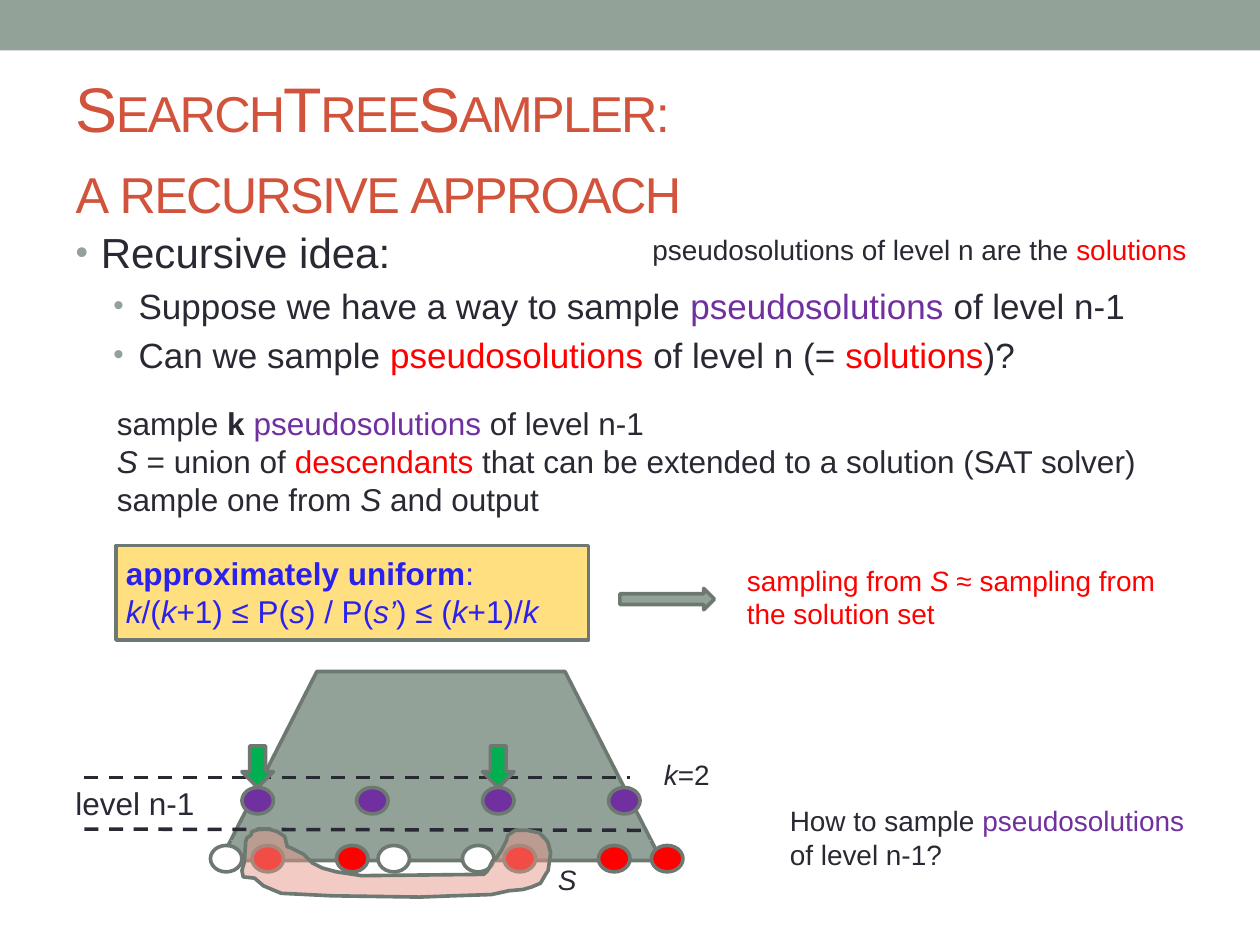
from lxml.etree import SubElement
from pptx import Presentation
from pptx.dml.color import RGBColor
from pptx.enum.dml import MSO_LINE
from pptx.enum.shapes import MSO_CONNECTOR, MSO_SHAPE
from pptx.enum.text import MSO_ANCHOR, MSO_AUTO_SIZE, PP_ALIGN
from pptx.oxml.ns import qn
from pptx.util import Inches, Pt

THEME = {
    "font": "Arial",
    "colors": {
        "ink": "292934", "title": "D2533C", "sage": "93A299", "edge": "6D7871",
        "red": "FF0000", "purple": "7030A0", "blue": "2B21EF", "white": "FFFFFF",
        "green": "00B050", "gold": "FFC000", "rose": "E4988A",
    },
    "title": 36, "idea": 24, "point": 20, "step": 18, "note": 16, "edge": 2.08,
}

TITLE = "SearchTreeSampler:\va recursive approach"
IDEAS = [
    (0, [("Recursive idea:",)]),
    (1, [("Suppose we have a way to sample ",), ("pseudosolutions ", "purple"),
         ("of level n-1",)]),
    (1, [("Can we sample ",), ("pseudosolutions ", "red"), ("of level n (= ",),
         ("solutions", "red"), (")?",)]),
]
STEPS = [
    [("sample ",), ("k ", "ink", "b"), ("pseudosolutions ", "purple"), ("of level n-1",)],
    [("S", "ink", "i"), (" = union of ",), ("descendants", "red"),
     (" that can be extended to a solution (SAT solver)",)],
    [("sample one from ",), ("S", "ink", "i"), (" and output",)],
]
BOUND = [
    [("approximately uniform", "blue", "b"), (":", "blue")],
    [("k", "blue", "i"), ("/(", "blue"), ("k", "blue", "i"), ("+1) ≤ P(", "blue"),
     ("s", "blue", "i"), (") / P(", "blue"), ("s’", "blue", "i"), (") ≤ (", "blue"),
     ("k", "blue", "i"), ("+1)/", "blue"), ("k", "blue", "i")],
]
NOTES = [
    ((0.5, 6.17, 3.25, 0.4), "step", [("level n-1",)]),
    ((5.17, 5.96, 0.67, 0.37), "note", [("k", "ink", "i"), ("=2",)]),
    ((5.83, 4.42, 3.58, 0.64), "note",
     [("sampling from ", "red"), ("S", "red", "i"),
      (" ≈ sampling from the solution set", "red")]),
    ((5.08, 1.8, 4.5, 0.37), "note",
     [("pseudosolutions of level n are the ",), ("solutions", "red")]),
    ((4.33, 6.8, 0.58, 0.37), "note", [("S", "ink", "i")]),
    ((6.17, 6.33, 3.42, 0.64), "note",
     [("How to sample ",), ("pseudosolutions ", "purple"), ("of level n-1?",)]),
]

NODE_SIZE = (0.25, 0.21)
LEVELS = [
    (6.71, [(1.67, "white"), (2, "red"), (2.67, "red"), (3, "white"),
            (3.67, "white"), (4, "red"), (4.75, "red"), (5.17, "red")]),
    (6.25, [(x, "purple") for x in (1.92, 2.83, 3.83, 4.83)]),
]
SAMPLED = [1.92, 3.83]
RULES = [
    ((1.83, 6.67), (5.17, 6.67), "sage", 0.75, None),
    ((0.67, 6.58), (5.17, 6.59), "ink", 2, MSO_LINE.DASH),
    ((0.67, 6.17), (5, 6.17), "ink", 2, MSO_LINE.DASH),
]
S_OUTLINE = [
    (193, 696), (192, 691), (194, 684), (195, 668), (196, 665), (199, 663),
    (200, 660), (206, 658), (213, 658), (220, 660), (226, 664), (228, 672),
    (231, 673), (241, 678), (248, 685), (256, 689), (267, 692), (287, 695),
    (384, 694), (387, 691), (391, 683), (394, 681), (398, 675), (402, 667),
    (403, 663), (409, 659), (418, 659), (428, 661), (433, 666), (435, 669),
    (437, 677), (435, 691), (433, 694), (429, 701), (422, 704), (415, 706),
    (404, 707), (390, 710), (360, 711), (333, 712), (263, 711), (223, 709),
    (216, 706), (209, 703), (202, 697),
]


def color(name):
    return RGBColor.from_string(THEME["colors"][name])


def paint(shape, fill, alpha=None, edge="edge"):
    shape.shadow.inherit = False
    shape.fill.solid()
    shape.fill.fore_color.rgb = color(fill)
    if alpha:
        tint = shape._element.spPr.find(qn("a:solidFill"))[0]
        SubElement(tint, qn("a:alpha")).set("val", str(alpha * 1000))
    if edge:
        shape.line.color.rgb = color(edge)
        shape.line.width = Pt(THEME["edge"])
    else:
        shape.line.fill.background()


def add_preset(slide, preset, box, fill, alpha=None, edge="edge"):
    shape = slide.shapes.add_shape(preset, *map(Inches, box))
    paint(shape, fill, alpha, edge)
    return shape


def style(run, size, tone="ink", face=""):
    run.font.name = THEME["font"]
    run.font.size = Pt(THEME[size])
    run.font.color.rgb = color(tone)
    run.font.bold = face == "b"
    run.font.italic = face == "i"


def write(paragraph, pieces, size):
    for text, *look in pieces:
        run = paragraph.add_run()
        run.text = text
        style(run, size, *look)


def place(shape, box):
    shape.left, shape.top, shape.width, shape.height = map(Inches, box)


def add_text(slide, box, lines, size):
    frame = slide.shapes.add_textbox(*map(Inches, box)).text_frame
    frame.word_wrap = True
    frame.auto_size = MSO_AUTO_SIZE.SHAPE_TO_FIT_TEXT
    for index, pieces in enumerate(lines):
        write(frame.add_paragraph() if index else frame.paragraphs[0], pieces, size)
    return frame


def add_rule(slide, start, end, tone, width, dash):
    rule = slide.shapes.add_connector(MSO_CONNECTOR.STRAIGHT, *map(Inches, start + end))
    rule.line.color.rgb = color(tone)
    rule.line.width = Pt(width)
    if dash:
        rule.line.dash_style = dash
    SubElement(rule._element.spPr, qn("a:effectLst"))


def fill_title(title):
    place(title, (0.5, 0.58, 9.17, 1.08))
    frame = title.text_frame
    frame.text = TITLE
    frame.vertical_anchor = MSO_ANCHOR.MIDDLE
    frame.margin_top = Inches(0.12)
    heading = frame.paragraphs[0]
    heading.alignment = PP_ALIGN.LEFT
    heading.line_spacing = 1.06
    for run in heading.runs:
        style(run, "title", "title")
        run.font._element.set("cap", "small")
        run.font._element.set("spc", "-100")


def fill_ideas(body):
    place(body, (0.5, 1.75, 9, 1.5))
    frame = body.text_frame
    for index, (level, pieces) in enumerate(IDEAS):
        idea = frame.add_paragraph() if index else frame.paragraphs[0]
        idea.level = level
        write(idea, pieces, "point" if level else "idea")
        props = idea._p.get_or_add_pPr()
        props.set("marL", str(Inches(0.2 + 0.3 * level)))
        props.set("indent", str(Inches(-0.2)))
        bullet = SubElement(props, qn("a:buClr"))
        SubElement(bullet, qn("a:srgbClr")).set("val", THEME["colors"]["sage"])
        SubElement(props, qn("a:buSzPct")).set("val", "85000")
        SubElement(props, qn("a:buFont")).set("typeface", THEME["font"])
        SubElement(props, qn("a:buChar")).set("char", "•")


def main():
    deck = Presentation()
    deck.slide_width, deck.slide_height = Inches(10), Inches(7.5)
    slide = deck.slides.add_slide(deck.slide_layouts[1])
    fill_title(slide.shapes.title)
    fill_ideas(slide.placeholders[1])

    add_preset(slide, MSO_SHAPE.RECTANGLE, (0, 0, 10, 0.4), "sage", edge=None)
    add_preset(slide, MSO_SHAPE.RECTANGLE, (0.92, 4.33, 3.75, 0.75), "gold", 50)
    tree = add_preset(slide, MSO_SHAPE.TRAPEZOID, (1.75, 5.33, 3.5, 1.5), "sage")
    tree.adjustments[0] = 0.51
    for top, nodes in LEVELS:
        for left, fill in nodes:
            add_preset(slide, MSO_SHAPE.OVAL, (left, top, *NODE_SIZE), fill)
    for rule in RULES:
        add_rule(slide, *rule)
    for left in SAMPLED:
        add_preset(slide, MSO_SHAPE.DOWN_ARROW, (left, 5.92, 0.25, 0.33), "green")
    add_preset(slide, MSO_SHAPE.RIGHT_ARROW, (4.92, 4.67, 0.75, 0.17), "sage")

    outline = slide.shapes.build_freeform(*S_OUTLINE[0], scale=Inches(0.01))
    outline.add_line_segments(S_OUTLINE[1:], close=True)
    paint(outline.convert_to_shape(), "rose", 50)

    steps = add_text(slide, (0.83, 3.16, 8.42, 1.92), STEPS + BOUND, "step")
    bound = steps.paragraphs[len(STEPS):]
    bound[0].space_before = Pt(21)
    for line in bound:
        line._p.get_or_add_pPr().set("marL", str(Inches(0.07)))
    for box, size, pieces in NOTES:
        add_text(slide, box, [pieces], size)

    deck.save("out.pptx")


if __name__ == "__main__":
    main()
